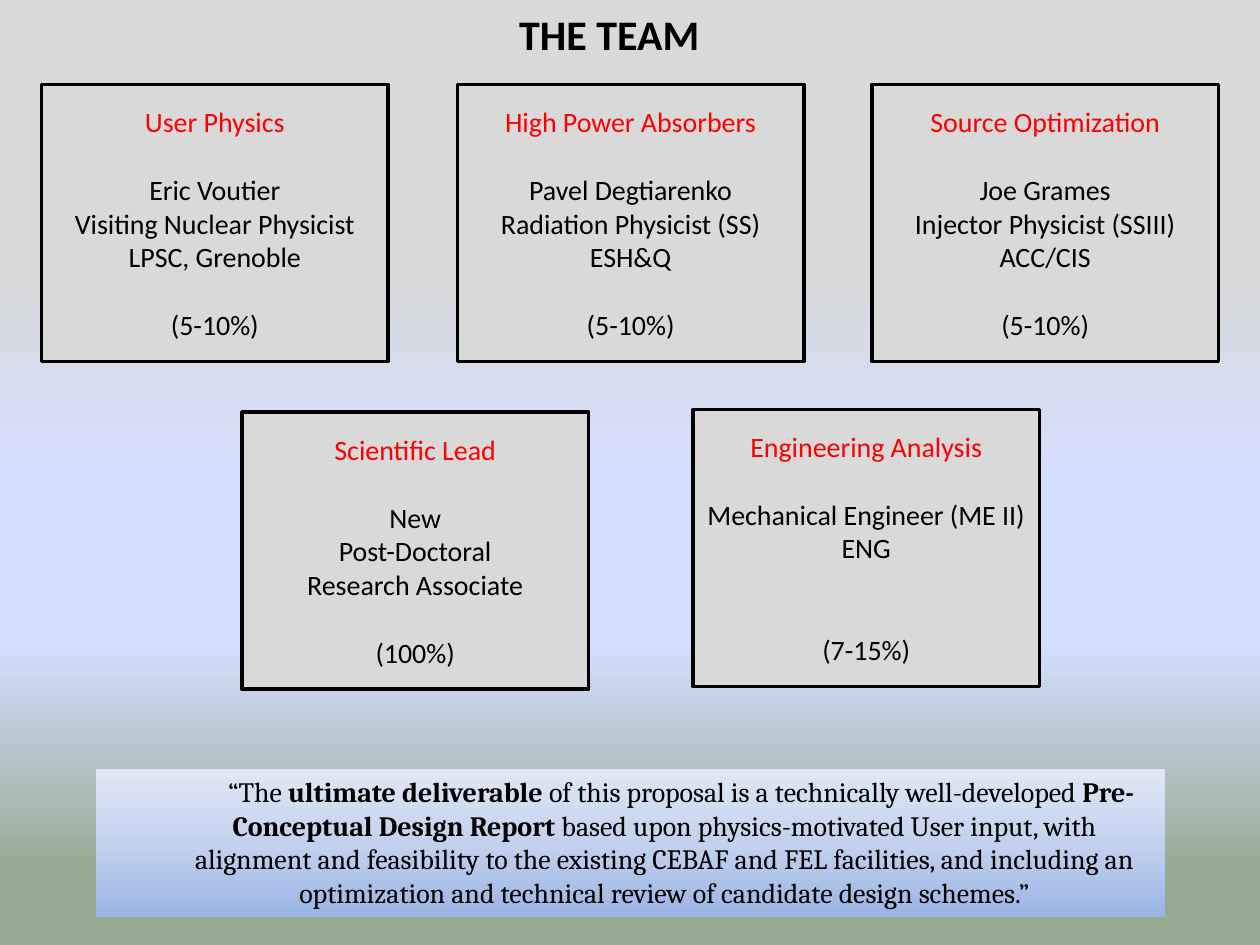
"""Build the team slide: five role cards above a closing quote."""
import dataclasses

import lxml.etree
import pptx
import pptx.dml.color
import pptx.enum.shapes
import pptx.enum.text
import pptx.oxml.ns
import pptx.util

Inches = pptx.util.Inches
Pt = pptx.util.Pt
ALIGN = pptx.enum.text.PP_ALIGN
ANCHOR = pptx.enum.text.MSO_ANCHOR
BLACK, RED, GREY = "000000", "FF0000", "D9D9D9"
LINE = 19.5


@dataclasses.dataclass
class Card:
    left: float
    top: float
    role: str
    lines: list[str]
    share: str
    gap: int = 1


CARDS = [
    Card(0.33, 0.67, "User Physics",
         ["Eric Voutier", "Visiting Nuclear Physicist", "LPSC, Grenoble"], "(5-10%)"),
    Card(3.63, 0.67, "High Power Absorbers",
         ["Pavel Degtiarenko", "Radiation Physicist (SS)", "ESH&Q"], "(5-10%)"),
    Card(6.92, 0.67, "Source Optimization",
         ["Joe Grames", "Injector Physicist (SSIII)", "ACC/CIS"], "(5-10%)"),
    Card(1.92, 3.27, "Scientific Lead",
         ["New", "Post-Doctoral", "Research Associate"], "(100%)"),
    Card(5.5, 3.25, "Engineering Analysis",
         ["Mechanical Engineer (ME II)", "ENG"], "(7-15%)", gap=2),
]
QUOTE = [
    ("“The ", False),
    ("ultimate deliverable", True),
    (" of this proposal is a technically well-developed ", False),
    ("Pre-Conceptual Design Report", True),
    (" based upon physics-motivated User input, with alignment and feasibility to the "
     "existing CEBAF and FEL facilities, and including an optimization and technical "
     "review of candidate design schemes.”", False),
]


def paint(color) -> pptx.dml.color.RGBColor:
    return pptx.dml.color.RGBColor.from_string(color)


def blend(owner, fill, stops: list[tuple[int, str]], angle: int) -> None:
    fill.gradient()
    fill.gradient_angle = angle
    qn = pptx.oxml.ns.qn
    group = owner.element.find(".//" + qn("a:gsLst"))
    for old in list(group):
        group.remove(old)
    for place, color in stops:
        stop = lxml.etree.SubElement(group, qn("a:gs"), pos=str(place * 1000))
        lxml.etree.SubElement(stop, qn("a:srgbClr"), val=color)


def write(para, text: str, size: float = 16, face: str = "Calibri",
          color: str = BLACK, bold: bool = False) -> None:
    run = para.add_run()
    run.text = text
    run.font.size = Pt(size)
    run.font.name = face
    run.font.bold = bold
    run.font.color.rgb = paint(color)


def add_box(slide, left: float, top: float, width: float, height: float):
    box = slide.shapes.add_shape(
        pptx.enum.shapes.MSO_SHAPE.RECTANGLE,
        Inches(left), Inches(top), Inches(width), Inches(height))
    box.shadow.inherit = False
    box.text_frame.word_wrap = True
    return box


def add_card(slide, card: Card) -> None:
    box = add_box(slide, card.left, card.top, 2.75, 2.2)
    box.fill.solid()
    box.fill.fore_color.rgb = paint(GREY)
    box.line.color.rgb = paint(BLACK)
    box.line.width = Pt(2)
    frame = box.text_frame
    frame.vertical_anchor = ANCHOR.MIDDLE
    rows = [(card.role, 0, RED), (card.lines[0], 1, BLACK)]
    rows += [(line, 0, BLACK) for line in card.lines[1:]]
    rows.append((card.share, card.gap, BLACK))
    for spot, (text, gap, color) in enumerate(rows):
        para = frame.add_paragraph() if spot else frame.paragraphs[0]
        para.alignment = ALIGN.CENTER
        if gap:
            para.space_before = Pt(gap * LINE)
        write(para, text, color=color)


def add_title(slide) -> None:
    title = slide.shapes.title
    title.left, title.top = Inches(4.02), Inches(0.02)
    title.width, title.height = Inches(1.65), Inches(0.5)
    frame = title.text_frame
    frame.word_wrap = False
    frame.auto_size = pptx.enum.text.MSO_AUTO_SIZE.NONE
    frame.vertical_anchor = ANCHOR.TOP
    para = frame.paragraphs[0]
    para.alignment = ALIGN.LEFT
    write(para, "THE TEAM", size=24, bold=True)


def add_quote(slide) -> None:
    box = add_box(slide, 0.76, 6.1, 8.49, 1.18)
    blend(box, box.fill, [(0, "9AB5E4"), (50, "C2D1ED"), (100, "E1E8F5")], 90)
    box.line.fill.background()
    box.text_frame.vertical_anchor = ANCHOR.TOP
    para = box.text_frame.paragraphs[0]
    para.alignment = ALIGN.CENTER
    props = para._p.get_or_add_pPr()
    props.set("marL", str(Inches(0.54)))
    props.set("indent", str(Inches(0.26)))
    for text, bold in QUOTE:
        write(para, text, face="Cambria", bold=bold)


def main() -> None:
    deck = pptx.Presentation()
    deck.slide_width, deck.slide_height = Inches(10), Inches(7.5)
    slide = deck.slides.add_slide(deck.slide_layouts.get_by_name("Title Only"))
    blend(slide, slide.background.fill,
          [(28, GREY), (51, "D4DEFF"), (68, "D4DEFF"), (92, "96AB94")], 270)
    add_title(slide)
    for card in CARDS:
        add_card(slide, card)
    add_quote(slide)
    deck.save("out.pptx")


if __name__ == "__main__":
    main()
